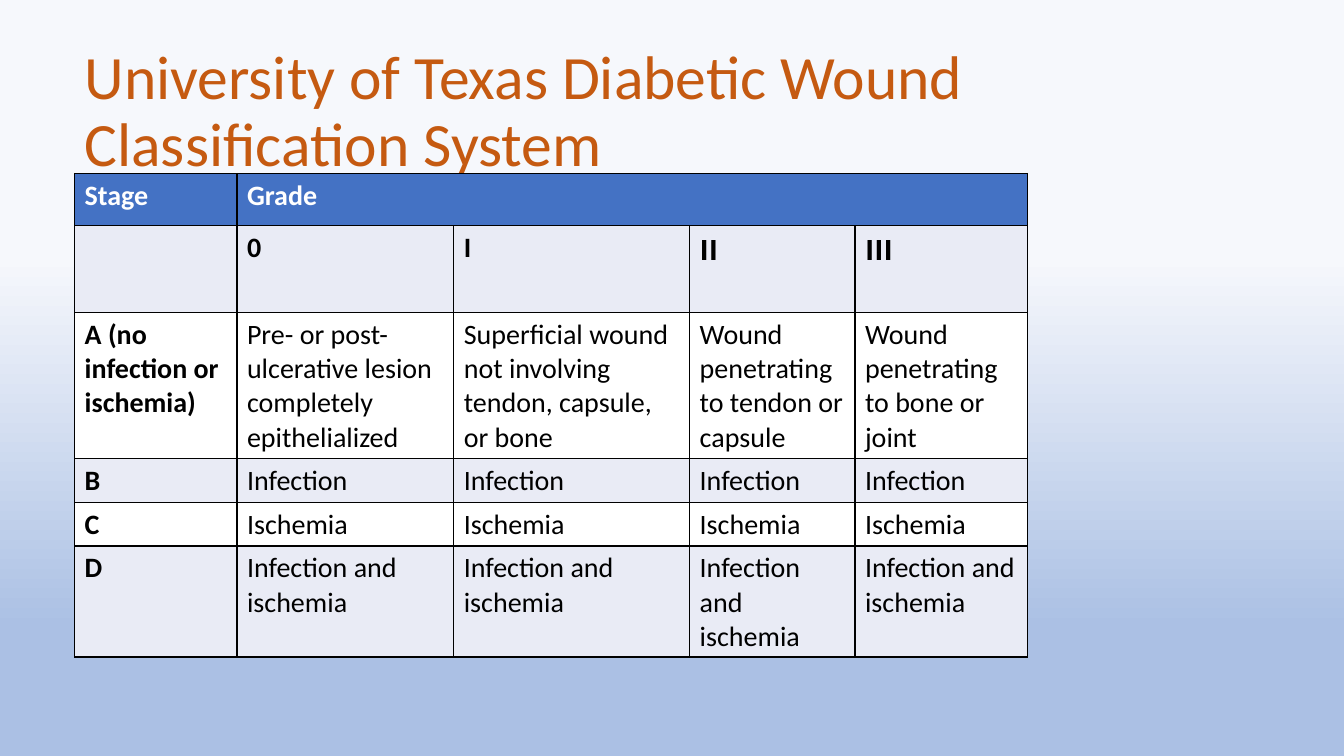
"""Build the diabetic wound classification slide."""
from lxml.etree import SubElement
from pptx import Presentation
from pptx.dml.color import RGBColor as RGB
from pptx.enum.text import MSO_ANCHOR as Anchor, PP_ALIGN as Align
from pptx.oxml.ns import qn
from pptx.util import Inches, Pt

COLORS = {
    "title": "C55A11", "header": "4472C4", "band": "E9EBF5",
    "white": "FFFFFF", "black": "000000", "sky": "F6F8FC", "haze": "ABC0E4",
}
COLUMN_WIDTHS = [1.61, 2.15, 2.34, 1.64, 1.71]
ROW_HEIGHTS = [0.52, 0.86, 1.45, 0.43, 0.43, 1.1]
ROWS = [
    ["Stage", "Grade", "", "", ""],
    ["", "0", "I", "II", "III"],
    ["A (no infection or ischemia)",
     "Pre- or post-ulcerative lesion completely epithelialized",
     "Superficial wound not involving tendon, capsule, or bone",
     "Wound penetrating to tendon or capsule",
     "Wound penetrating to bone or joint"],
    ["B"] + ["Infection"] * 4,
    ["C"] + ["Ischemia"] * 4,
    ["D"] + ["Infection and ischemia"] * 4,
]


class WoundSlide:
    def __init__(self, deck):
        self.font = "Calibri"
        self.slide = deck.slides.add_slide(deck.slide_layouts[6])

    def color(self, name):
        return RGB.from_string(COLORS[name])

    def background(self):
        fill = self.slide.background.fill
        fill.gradient()
        fill.gradient_angle = 270
        for stop, position, name in zip(fill.gradient_stops, (0.34, 0.83), ("sky", "haze")):
            stop.position = position
            stop.color.rgb = self.color(name)

    def style_text(self, para, text, size, color, bold=False, font=None):
        para.text = text
        for span in para.runs:
            span.font.name = font or self.font
            span.font.size = Pt(size)
            span.font.bold = bold
            span.font.color.rgb = self.color(color)

    def title(self, text, left, top, width, height):
        box = self.slide.shapes.add_textbox(*map(Inches, (left, top, width, height)))
        frame = box.text_frame
        frame.word_wrap = True
        frame.vertical_anchor = Anchor.MIDDLE
        para = frame.paragraphs[0]
        para.line_spacing = 0.9
        self.style_text(para, text, 44, "title")

    def border(self, cell):
        properties = cell._tc.get_or_add_tcPr()
        for index, side in enumerate(("lnL", "lnR", "lnT", "lnB")):
            line = properties.makeelement(qn(f"a:{side}"), {"w": str(Pt(1))})
            fill = SubElement(line, qn("a:solidFill"))
            SubElement(fill, qn("a:srgbClr"), val=COLORS["black"])
            properties.insert(index, line)

    def table(self, left, top):
        size = sum(COLUMN_WIDTHS), sum(ROW_HEIGHTS)
        frame = self.slide.shapes.add_table(
            len(ROWS), len(COLUMN_WIDTHS), *map(Inches, (left, top, *size)))
        table = frame.table
        for column, width in zip(table.columns, COLUMN_WIDTHS):
            column.width = Inches(width)
        for row, height in zip(table.rows, ROW_HEIGHTS):
            row.height = Inches(height)
        table.cell(0, 1).merge(table.cell(0, 4))
        for row, texts in enumerate(ROWS):
            for column, text in enumerate(texts):
                self.cell(table.cell(row, column), text, row, column)
        table.cell(0, 1).text_frame.paragraphs[0].alignment = Align.JUSTIFY

    def cell(self, cell, text, row, column):
        shade = "header" if row == 0 else "band" if row % 2 else "white"
        cell.fill.solid()
        cell.fill.fore_color.rgb = self.color(shade)
        self.border(cell)
        self.style_text(cell.text_frame.paragraphs[0], text, 20,
                        "white" if row == 0 else "black",
                        bold=row < 2 or column == 0,
                        font="Open Sans" if text in ("II", "III") else None)


def main():
    deck = Presentation()
    deck.slide_width, deck.slide_height = Inches(13.33), Inches(7.5)
    page = WoundSlide(deck)
    page.background()
    page.title("University of Texas Diabetic Wound Classiﬁcation System", 0.74, 0.13, 9.4, 1.98)
    page.table(0.74, 1.72)
    deck.save("out.pptx")


if __name__ == "__main__":
    main()
